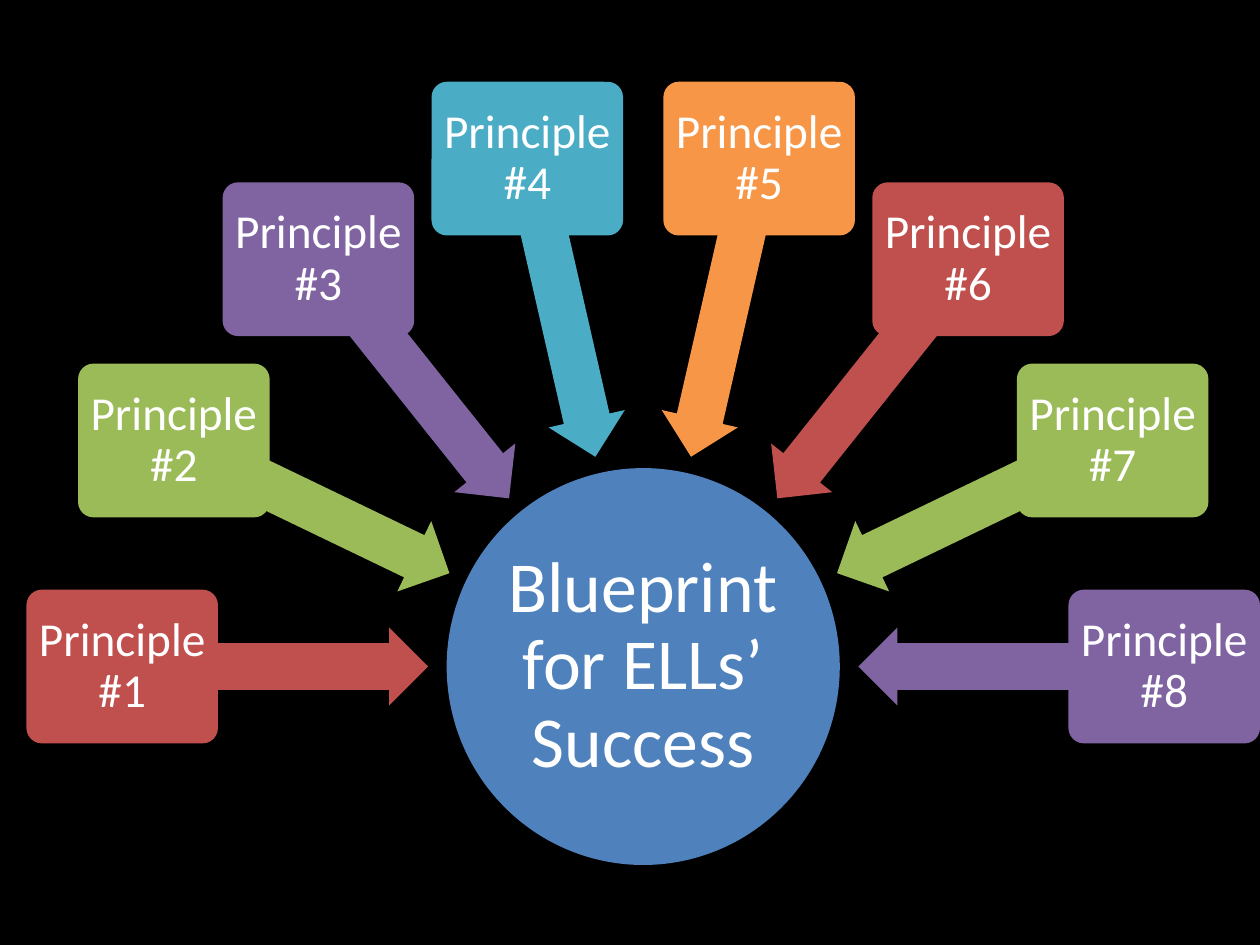
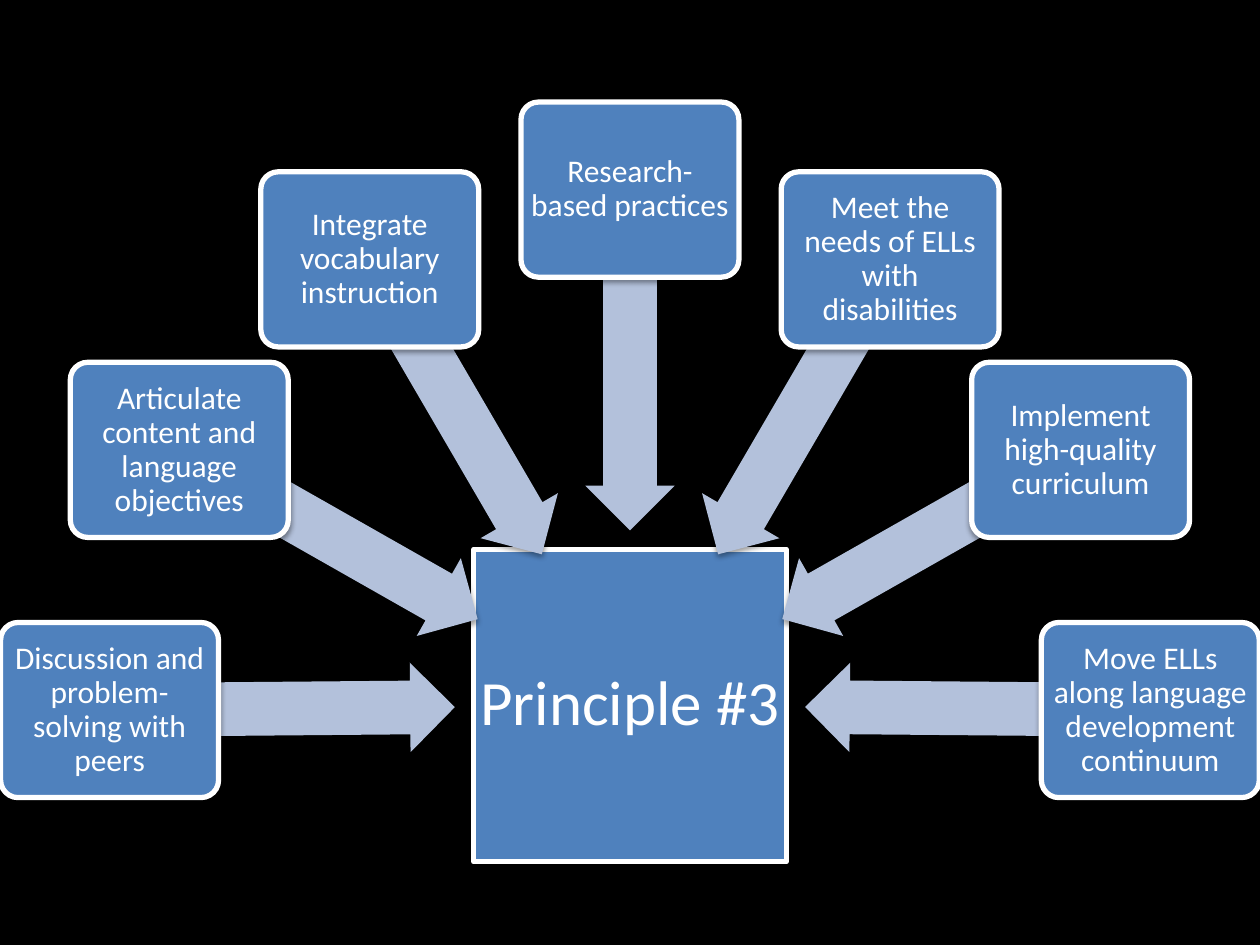
from dataclasses import dataclass
from itertools import cycle
from math import atan2, cos, degrees, hypot, pi, sin

from lxml.etree import SubElement
from pptx import Presentation
from pptx.dml.color import RGBColor
from pptx.enum.shapes import MSO_SHAPE
from pptx.enum.text import MSO_ANCHOR, PP_ALIGN
from pptx.oxml.ns import qn
from pptx.presentation import Presentation as Deck
from pptx.shapes.autoshape import Shape
from pptx.slide import Slide
from pptx.util import Inches, Pt

SLIDE_WIDTH, SLIDE_HEIGHT = Inches(10), Inches(7.5)
CELL = SLIDE_WIDTH / 100  # the slide is a grid of 100 columns and 75 rows

FONT = "Calibri"
BLACK, WHITE = "000000", "FFFFFF"
BLUE, PALE_BLUE = "4F81BD", "B3C1DB"
RED, GREEN, PURPLE, TEAL, ORANGE = "C0504D", "9BBB59", "8064A2", "4BACC6", "F79646"


@dataclass(frozen=True)
class Node:
    """Look of a labelled shape; its size is in grid cells."""
    kind: MSO_SHAPE
    width: float
    height: float
    font_size: float
    inset: float


@dataclass(frozen=True)
class Fan:
    """Boxes on a half circle whose arrows aim at a hub; lengths in grid cells."""
    hub_label: str
    labels: list[str]
    hub: Node
    box: Node
    center_x: float
    hub_y: float
    ring_y: float
    radius: float
    arrow_radius: float
    arrow_length: float
    arrow_width: float
    box_colors: list[str]
    arrow_colors: list[str]
    raised: bool = False


PRINCIPLES = Fan(
    hub_label="Blueprint for ELLs’ Success",
    labels=[f"Principle #{number}" for number in range(1, 9)],
    hub=Node(MSO_SHAPE.OVAL, 31.2, 31.5, 41, 0.3),
    box=Node(MSO_SHAPE.ROUNDED_RECTANGLE, 15.2, 12.2, 27, 0.6),
    center_x=51.05, hub_y=52.9, ring_y=52.9, radius=41.35,
    arrow_radius=29.2, arrow_length=24.25, arrow_width=6.2,
    box_colors=[RED, GREEN, PURPLE, TEAL, ORANGE],
    arrow_colors=[RED, GREEN, PURPLE, TEAL, ORANGE],
)

PRACTICES = Fan(
    hub_label="Principle #3",
    labels=[
        "Discussion and problem-solving with peers",
        "Articulate content and language objectives",
        "Integrate vocabulary instruction",
        "Research-based practices",
        "Meet the needs of ELLs with disabilities",
        "Implement high-quality curriculum",
        "Move ELLs along language development continuum",
    ],
    hub=Node(MSO_SHAPE.RECTANGLE, 24.8, 24.8, 36, 0.3),
    box=Node(MSO_SHAPE.ROUNDED_RECTANGLE, 17.3, 13.9, 18, 0.4),
    center_x=50, hub_y=56, ring_y=56.35, radius=41.3,
    arrow_radius=27.5, arrow_length=27.2, arrow_width=7.1,
    box_colors=[BLUE], arrow_colors=[PALE_BLUE], raised=True,
)


def color(hex_code: str) -> RGBColor:
    return RGBColor.from_string(hex_code)


def cells(count: float) -> int:
    return round(count * CELL)


def add_shadow(shape: Shape) -> None:
    effects = shape.element.spPr.find(qn("a:effectLst"))
    shadow = SubElement(effects, qn("a:outerShdw"), blurRad=str(Pt(3.1)),
                        dist=str(Pt(1.6)), dir="5400000", rotWithShape="0")
    tone = SubElement(shadow, qn("a:srgbClr"), val=BLACK)
    SubElement(tone, qn("a:alpha"), val="38000")


def add_centered(slide: Slide, kind: MSO_SHAPE, x: float, y: float, width: float,
                 height: float, fill: str, *, outlined: bool = False,
                 raised: bool = False) -> Shape:
    """Draw a preset shape around the grid point (x, y)."""
    shape = slide.shapes.add_shape(kind, cells(x - width / 2), cells(y - height / 2),
                                   cells(width), cells(height))
    shape.fill.solid()
    shape.fill.fore_color.rgb = color(fill)
    if outlined:
        shape.line.color.rgb = color(WHITE)
        shape.line.width = Pt(3)
    else:
        shape.line.fill.background()
    shape.shadow.inherit = False
    if raised:
        add_shadow(shape)
    return shape


def write(shape: Shape, text: str, *, size: float, inset: float) -> None:
    frame = shape.text_frame
    frame.word_wrap = True
    frame.vertical_anchor = MSO_ANCHOR.MIDDLE
    frame.margin_left = frame.margin_right = cells(inset)
    frame.margin_top = frame.margin_bottom = cells(inset)
    paragraph = frame.paragraphs[0]
    paragraph.alignment = PP_ALIGN.CENTER
    paragraph.line_spacing = 0.9
    run = paragraph.add_run()
    run.text = text
    run.font.name = FONT
    run.font.size = Pt(size)
    run.font.color.rgb = color(WHITE)


def add_node(slide: Slide, node: Node, text: str, x: float, y: float, fill: str,
             raised: bool) -> None:
    shape = add_centered(slide, node.kind, x, y, node.width, node.height, fill,
                         outlined=raised, raised=raised)
    if node.kind == MSO_SHAPE.ROUNDED_RECTANGLE:
        shape.adjustments[0] = 0.1
    write(shape, text, size=node.font_size, inset=node.inset)


def add_arrow(slide: Slide, fan: Fan, box_x: float, box_y: float, fill: str) -> None:
    """Place an arrow on the line from a box to the hub's center."""
    dx, dy = box_x - fan.center_x, box_y - fan.hub_y
    share = fan.arrow_radius / hypot(dx, dy)
    arrow = add_centered(slide, MSO_SHAPE.LEFT_ARROW, fan.center_x + share * dx,
                         fan.hub_y + share * dy, fan.arrow_length, fan.arrow_width,
                         fill, raised=fan.raised)
    arrow.adjustments[0], arrow.adjustments[1] = 0.6, 0.5
    arrow.rotation = degrees(atan2(dy, dx)) % 360


def add_fan_slide(deck: Deck, fan: Fan) -> None:
    slide = deck.slides.add_slide(deck.slide_layouts[6])
    slide.background.fill.solid()
    slide.background.fill.fore_color.rgb = color(BLACK)
    add_node(slide, fan.hub, fan.hub_label, fan.center_x, fan.hub_y, BLUE, fan.raised)

    step = pi / (len(fan.labels) - 1)
    spokes = zip(fan.labels, cycle(fan.box_colors), cycle(fan.arrow_colors))
    for index, (label, box_color, arrow_color) in enumerate(spokes):
        x = fan.center_x - fan.radius * cos(index * step)
        y = fan.ring_y - fan.radius * sin(index * step)
        add_arrow(slide, fan, x, y, arrow_color)
        add_node(slide, fan.box, label, x, y, box_color, fan.raised)


def main() -> None:
    deck = Presentation()
    deck.slide_width, deck.slide_height = SLIDE_WIDTH, SLIDE_HEIGHT
    for fan in (PRINCIPLES, PRACTICES):
        add_fan_slide(deck, fan)
    deck.save("out.pptx")


if __name__ == "__main__":
    main()
